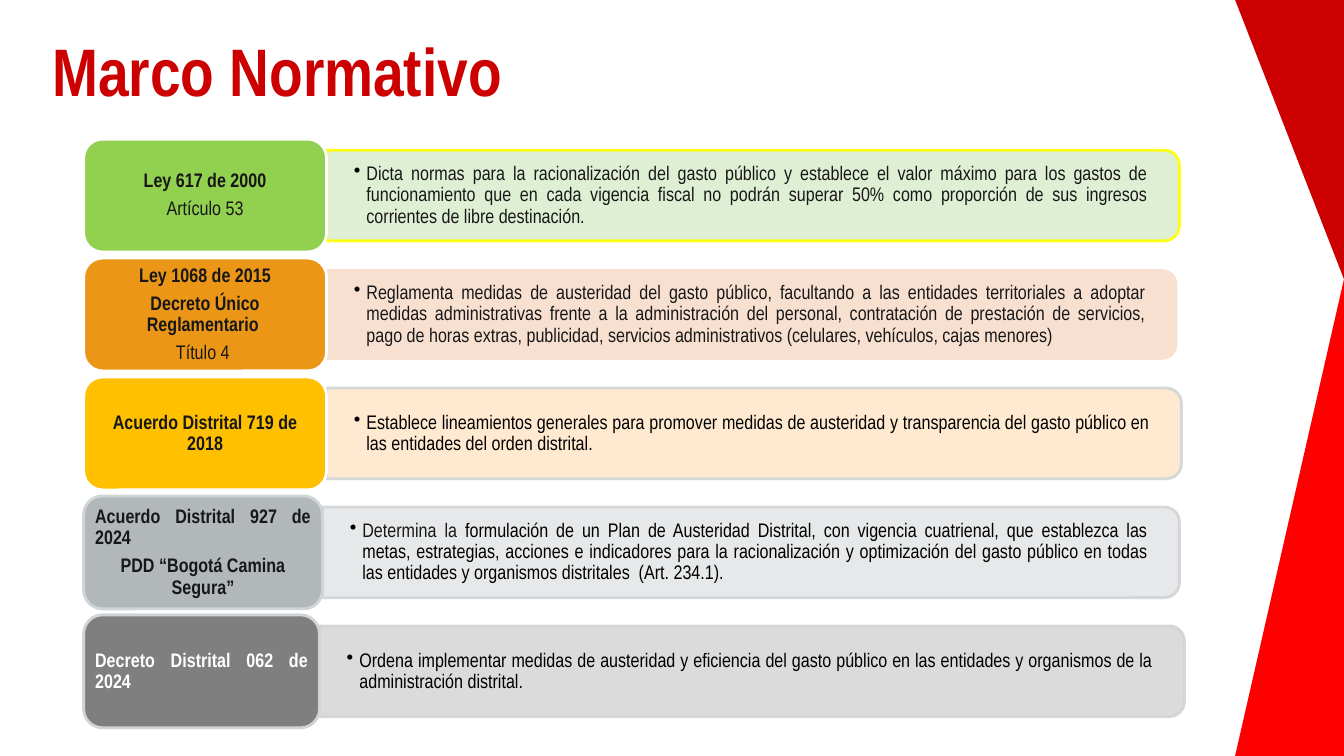
from lxml import etree
from pptx import Presentation
from pptx import util as u
from pptx.dml.color import RGBColor
from pptx.enum import shapes, text
from pptx.oxml import ns

COLUMNS, ROWS = 133.33, 75  # grid of tenths of an inch
INK, BLACK, WHITE, RED, SILVER = "171717", "000000", "FFFFFF", "CC0000", "D1D4D6"
LEFT, CENTER, JUSTIFY = text.PP_ALIGN.LEFT, text.PP_ALIGN.CENTER, text.PP_ALIGN.JUSTIFY
SHAPE = shapes.MSO_SHAPE


def color(value):
    return RGBColor.from_string(value)


def add_xml(parent, tag, **attributes):
    return etree.SubElement(parent, ns.qn(tag), attributes)


def set_all(target, values):
    for name, value in values.items():
        setattr(target, name, value)


class NormSlide:
    font_name = "Arial Narrow"
    line_width = u.Pt(2)
    opacity = "90000"

    def __init__(self, deck):
        self.unit = deck.slide_width / COLUMNS
        self.page = deck.slides.add_slide(deck.slide_layouts[6])

    def grid(self, *lengths):
        return [round(length * self.unit) for length in lengths]

    def fade(self, element):
        for tint in element.iter(ns.qn("a:srgbClr")):
            add_xml(tint, "a:alpha", val=self.opacity)

    def block(self, kind, place, fill, line=None, rotation=0, flip=False):
        shape = self.page.shapes.add_shape(kind, *self.grid(*place))
        shape.shadow.inherit = False
        shape.rotation = rotation
        shape.fill.solid()
        shape.fill.fore_color.rgb = color(fill)
        if line:
            shape.line.width = self.line_width
            shape.line.color.rgb = color(line)
        else:
            shape.line.fill.background()
        if flip:
            shape.element.spPr.xfrm.set("flipH", "1")
        return shape

    def fill_text(self, box, paragraphs, size, margins, after=0, bullet=False):
        frame = box.text_frame
        side, top = self.grid(*margins)
        set_all(frame, dict(
            word_wrap=True, vertical_anchor=text.MSO_ANCHOR.MIDDLE,
            margin_left=side, margin_right=side, margin_top=top, margin_bottom=top))
        for number, (alignment, spans) in enumerate(paragraphs):
            para = frame.add_paragraph() if number else frame.paragraphs[0]
            if bullet:
                self.bullet(para)
            set_all(para, dict(alignment=alignment, line_spacing=0.9, space_after=u.Pt(after)))
            for words, ink, bold in spans:
                span = para.add_run()
                span.text = words
                set_all(span.font, dict(name=self.font_name, size=u.Pt(size), bold=bold))
                span.font.color.rgb = color(ink)

    def bullet(self, para):
        para.level = 1
        properties = para._p.get_or_add_pPr()
        indent, = self.grid(1.25)
        properties.set("marL", str(indent))
        properties.set("indent", str(-indent))
        add_xml(add_xml(properties, "a:buClr"), "a:srgbClr", val=BLACK)
        add_xml(properties, "a:buChar", char="•")

    def text_box(self, place, paragraphs, size, margins, **options):
        box = self.page.shapes.add_textbox(*self.grid(*place))
        self.fill_text(box, paragraphs, size, margins, **options)

    def norm(self, middle, label, panel):
        left, label_height, panel_height, text_height = 8.3, 11.2, 9, 8.1
        width, length = label["width"], panel["length"]
        start = left + width
        # Panel: an upright shape turned a quarter, with its text on top
        back = self.block(
            SHAPE.ROUND_2_SAME_RECTANGLE,
            (start + (length - panel_height) / 2, middle - length / 2, panel_height, length),
            panel["fill"], panel["line"], rotation=90)
        self.fade(back.element.spPr)
        self.text_box((start, middle - text_height / 2, length - 0.4, text_height),
                      [(JUSTIFY, panel["spans"])], 14, (2.7, 1.4), bullet=True)
        # Label
        box = self.block(SHAPE.ROUNDED_RECTANGLE,
                         (left, middle - label_height / 2, width, label_height),
                         label["fill"], label["line"])
        self.fill_text(box, label["paragraphs"], 14, (0.6, 0.3), after=5)


def label(width, fill, line, *paragraphs):
    return dict(width=width, fill=fill, line=line, paragraphs=paragraphs)


def panel(length, fill, line, *spans):
    return dict(length=length, fill=fill, line=line,
                spans=[(words, ink, False) for words, ink in spans])


def heading(words, alignment=CENTER, ink=INK, bold=True):
    return alignment, [(words, ink, bold)]


NORMS = [
    (label(24.1, "92D050", WHITE, heading("Ley 617 de 2000"), heading("Artículo 53", bold=False)),
     panel(84.6, "DCEED0", "FFFF00", (
         "Dicta normas para la racionalización del gasto público y establece el valor máximo "
         "para los gastos de funcionamiento que en cada vigencia fiscal no podrán superar 50% "
         "como proporción de sus ingresos corrientes de libre destinación.", INK))),
    (label(24.1, "EC9618", WHITE, heading("Ley 1068 de 2015"),
           heading("Decreto Único Reglamentario "), heading("Título 4 ", bold=False)),
     panel(84.4, "F8DDCC", None, (
         "Reglamenta medidas de austeridad del gasto público, facultando a las entidades "
         "territoriales a adoptar medidas administrativas frente a la administración del "
         "personal, contratación de prestación de servicios, pago de horas extras, publicidad, "
         "servicios administrativos (celulares, vehículos, cajas menores)", INK))),
    (label(24.1, "FFC000", WHITE, heading("Acuerdo Distrital 719 de 2018")),
     panel(84.8, "FFE8CC", SILVER, (
         "Establece lineamientos generales para promover medidas de austeridad y transparencia "
         "del gasto público en las entidades del orden distrital.", BLACK))),
    (label(23.7, "B2B7BA", SILVER, heading("Acuerdo Distrital 927 de 2024", JUSTIFY),
           heading("PDD “Bogotá Camina Segura”")),
     panel(85, "E4E6E7", SILVER, ("Determina la ", INK), (
         "formulación de un Plan de Austeridad Distrital, con vigencia cuatrienal, que "
         "establezca las metas, estrategias, acciones e indicadores para la racionalización y "
         "optimización del gasto público en todas las entidades y organismos distritales  "
         "(Art. 234.1).", BLACK))),
    (label(23.4, "7F7F7F", SILVER, heading("Decreto Distrital 062 de 2024", JUSTIFY, WHITE)),
     panel(85.8, "D8D8D8", SILVER, (
         "Ordena implementar medidas de austeridad y eficiencia del gasto público en las "
         "entidades y organismos de la administración distrital.", BLACK))),
]


def main():
    deck = Presentation()
    deck.slide_width, deck.slide_height = u.Inches(COLUMNS / 10), u.Inches(ROWS / 10)
    slide = NormSlide(deck)

    # Red band on the right edge
    band, fold = 10.8, 27.7
    edge = COLUMNS - band
    slide.block(SHAPE.RIGHT_TRIANGLE, (edge, fold, band, ROWS - fold), "FF0000", flip=True)
    slide.block(SHAPE.RIGHT_TRIANGLE, (edge, 0, band, fold), RED, rotation=180)

    # Title
    slide.text_box((4.2, 1.2, 114.2, 12.5), [heading("Marco Normativo", LEFT, RED)], 48, (1, 0.5))

    # One row per norm
    first_middle, step = 19.4, 11.8
    for number, (name, summary) in enumerate(NORMS):
        slide.norm(first_middle + number * step, name, summary)

    deck.save("out.pptx")


if __name__ == "__main__":
    main()
